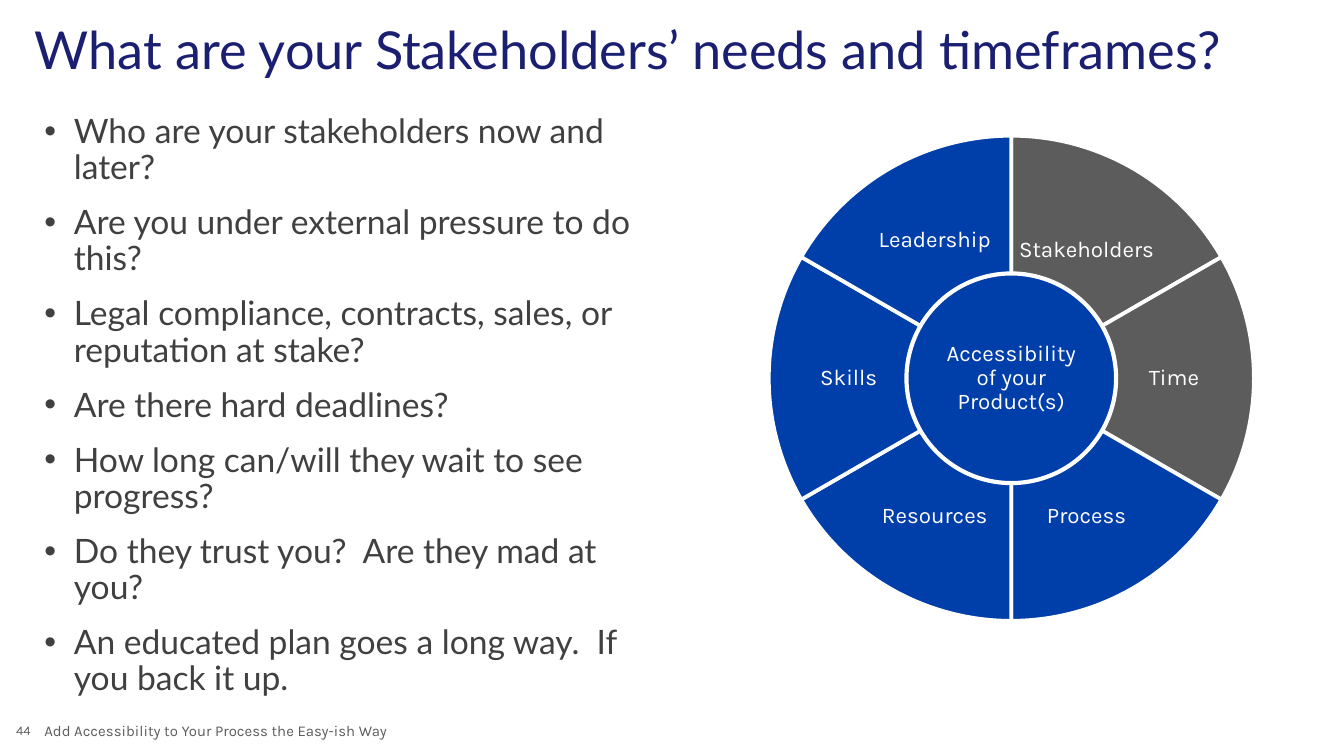
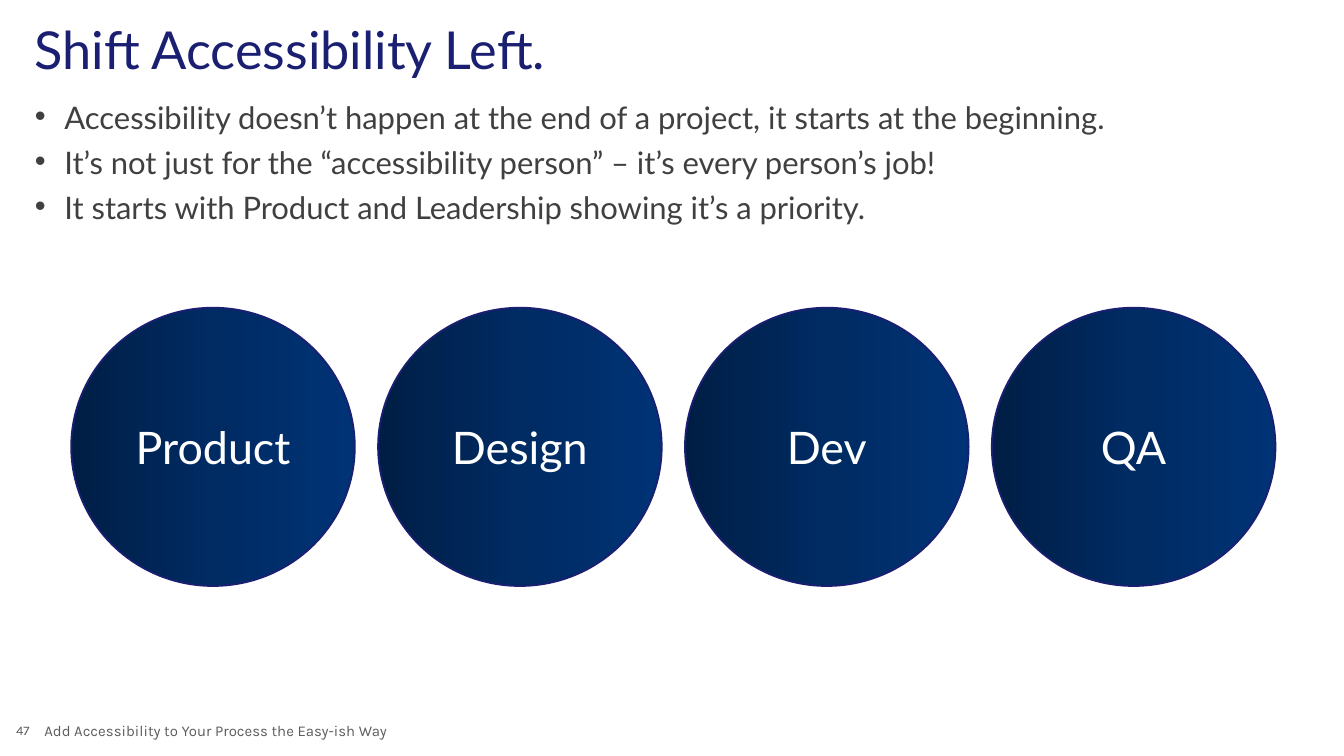
from copy import deepcopy

from pptx import Presentation
from pptx.dml.color import RGBColor
from pptx.enum.shapes import MSO_SHAPE as Shape
from pptx.enum.text import MSO_ANCHOR as Anchor, PP_ALIGN as Align
from pptx.oxml.ns import qn
from pptx.util import Inches, Pt

# Shared look
NAVY, BLUE, GRAY = "1A1F71", "003EA9", "5C5C5C"
INK, WHITE = "404040", "FFFFFF"
CIRCLE_GRADIENT = [(0, "001E45"), (0.5, "002B63"), (1, "003375")]
TITLE_FONT, LABEL_FONT, BULLET_FONT = "Lato", "Karla", "Arial"
MARGIN = 0.26
CONTENT_WIDTH = 9.5
BULLET_INDENT = 0.22
FOOTER = "Add Accessibility to Your Process the Easy-ish Way"

# Stakeholder wheel: name, colour, label offset from the wheel's centre
WHEEL_SIZE, HUB_SIZE = 3.61, 1.56
WHEEL_X, WHEEL_Y = 5.72 + WHEEL_SIZE / 2, 1.01 + WHEEL_SIZE / 2
LABEL_WIDTH, LABEL_HEIGHT = 1.05, 0.77
WEDGE_ANGLE = 60
WEDGES = [
    ("Stakeholders", GRAY, 0.56, -0.95),
    ("Time", GRAY, 1.21, 0),
    ("Process", BLUE, 0.56, 1.03),
    ("Resources", BLUE, -0.57, 1.03),
    ("Skills", BLUE, -1.21, 0),
    ("Leadership", BLUE, -0.57, -1.03),
]
STAKEHOLDER_QUESTIONS = [
    "Who are your stakeholders now and later?",
    "Are you under external pressure to do this?",
    "Legal compliance, contracts, sales, or reputation at stake?",
    "Are there hard deadlines?",
    "How long can/will they wait to see progress?",
    "Do they trust you?  Are they mad at you?",
    "An educated plan goes a long way.  If you back it up.",
]

# Row of team circles
TEAMS = ["Product", "Design", "Dev", "QA"]
FIRST_TEAM_LEFT, LAST_TEAM_LEFT = 0.53, 7.38
SHIFT_LEFT_POINTS = [
    "Accessibility doesn’t happen at the end of a project, it starts at the beginning.",
    "It’s not just for the “accessibility person” – it’s every person’s job!",
    "It starts with Product and Leadership showing it’s a priority.",
]


def color(value):
    return RGBColor.from_string(value)


def box(left, top, width, height):
    return [Inches(n) for n in (left, top, width, height)]


def centered_box(x, y, width, height):
    return box(x - width / 2, y - height / 2, width, height)


def style_text(frame, font, size, hue, align=Align.LEFT, anchor=Anchor.TOP,
               spacing=1.0, wrap=True):
    frame.margin_left = frame.margin_right = 0
    frame.margin_top = frame.margin_bottom = 0
    frame.word_wrap = wrap
    frame.vertical_anchor = anchor
    for paragraph in frame.paragraphs:
        paragraph.alignment = align
        paragraph.line_spacing = spacing
        for run in paragraph.runs:
            run.font.name = font
            run.font.size = Pt(size)
            run.font.color.rgb = color(hue)


def add_text(shapes, place, text, *style, **options):
    frame = shapes.add_textbox(*place).text_frame
    frame.text = text
    style_text(frame, *style, **options)
    return frame


def add_bullets(slide, place, points, size, spacing):
    frame = add_text(slide.shapes, place, "\n".join(points),
                     TITLE_FONT, size, INK, spacing=spacing)
    for index, paragraph in enumerate(frame.paragraphs):
        if index:
            paragraph.space_before = Pt(10)
        properties = paragraph._p.get_or_add_pPr()
        properties.set("marL", str(Inches(BULLET_INDENT)))
        properties.set("indent", str(-Inches(BULLET_INDENT)))
        for tag, attributes in (("a:buFont", {"typeface": BULLET_FONT}),
                                ("a:buChar", {"char": "•"})):
            properties.append(properties.makeelement(qn(tag), attributes))


def add_outlined(shapes, kind, place, fill, line, line_width):
    shape = shapes.add_shape(kind, *place)
    shape.shadow.inherit = False
    if fill:
        shape.fill.solid()
        shape.fill.fore_color.rgb = color(fill)
    shape.line.color.rgb = color(line)
    shape.line.width = Pt(line_width)
    return shape


def fill_gradient(shape, stops):
    shape.fill.gradient()
    shape.fill.gradient_angle = 0
    stop_list = shape._element.spPr.find(".//" + qn("a:gsLst"))
    while len(stop_list) < len(stops):
        stop_list.append(deepcopy(stop_list[0]))
    for stop, (position, hue) in zip(shape.fill.gradient_stops, stops):
        stop.position = position
        stop.color.rgb = color(hue)


def add_slide(deck, title, number):
    slide = deck.slides.add_slide(deck.slide_layouts[5])
    heading = slide.shapes.title
    heading.left, heading.top, heading.width, heading.height = box(
        MARGIN, 0.2, CONTENT_WIDTH, 0.41)
    heading.text_frame.text = title
    style_text(heading.text_frame, TITLE_FONT, 28, NAVY, spacing=0.85)
    # Footer and page number
    add_text(slide.shapes, box(0.33, 5.37, 3.53, 0.13), FOOTER,
             LABEL_FONT, 8, GRAY)
    add_text(slide.shapes, box(0.12, 5.37, 0.12, 0.12), str(number),
             LABEL_FONT, 7, GRAY, anchor=Anchor.MIDDLE, wrap=False)
    return slide


def add_wheel(slide):
    wheel = slide.shapes.add_group_shape().shapes
    label_style = dict(align=Align.CENTER, anchor=Anchor.MIDDLE, spacing=0.9)
    for index, (name, fill, dx, dy) in enumerate(WEDGES):
        wedge = add_outlined(
            wheel, Shape.PIE,
            centered_box(WHEEL_X, WHEEL_Y, WHEEL_SIZE, WHEEL_SIZE),
            fill, WHITE, 2)
        # Wedges run clockwise from the top; 0.6 adjustment units per degree
        start = 270 + index * WEDGE_ANGLE
        wedge.adjustments[0] = start % 360 * 0.6
        wedge.adjustments[1] = (start + WEDGE_ANGLE) % 360 * 0.6
        add_text(wheel,
                 centered_box(WHEEL_X + dx, WHEEL_Y + dy,
                              LABEL_WIDTH, LABEL_HEIGHT),
                 name, LABEL_FONT, 12, WHITE, **label_style)
    hub = add_outlined(
        wheel, Shape.OVAL, centered_box(WHEEL_X, WHEEL_Y, HUB_SIZE, HUB_SIZE),
        BLUE, WHITE, 2.25)
    hub.text_frame.text = "Accessibility of your Product(s)"
    style_text(hub.text_frame, LABEL_FONT, 12, WHITE, **label_style)


def add_team_circles(slide):
    pitch = (LAST_TEAM_LEFT - FIRST_TEAM_LEFT) / (len(TEAMS) - 1)
    for index, team in enumerate(TEAMS):
        circle = add_outlined(
            slide.shapes, Shape.OVAL,
            box(FIRST_TEAM_LEFT + index * pitch, 2.29, 2.11, 2.07),
            None, NAVY, 1)
        fill_gradient(circle, CIRCLE_GRADIENT)
        circle.text_frame.text = team
        style_text(circle.text_frame, TITLE_FONT, 24, WHITE,
                   align=Align.CENTER, anchor=Anchor.MIDDLE)


def main():
    deck = Presentation()
    # Widescreen, 16:9
    deck.slide_width = Inches(10)
    deck.slide_height = Inches(10) * 9 // 16

    # Stakeholders
    stakeholders = add_slide(
        deck, "What are your Stakeholders’ needs and timeframes?", 44)
    add_wheel(stakeholders)
    add_bullets(stakeholders, box(0.33, 0.85, 4.67, 4.21),
                STAKEHOLDER_QUESTIONS, 18, 0.9)

    # Shift left
    shift_left = add_slide(deck, "Shift Accessibility Left.", 47)
    add_team_circles(shift_left)
    add_bullets(shift_left, box(MARGIN, 0.81, CONTENT_WIDTH, 0.93),
                SHIFT_LEFT_POINTS, 16.6, 0.7)

    deck.save("out.pptx")


if __name__ == "__main__":
    main()
